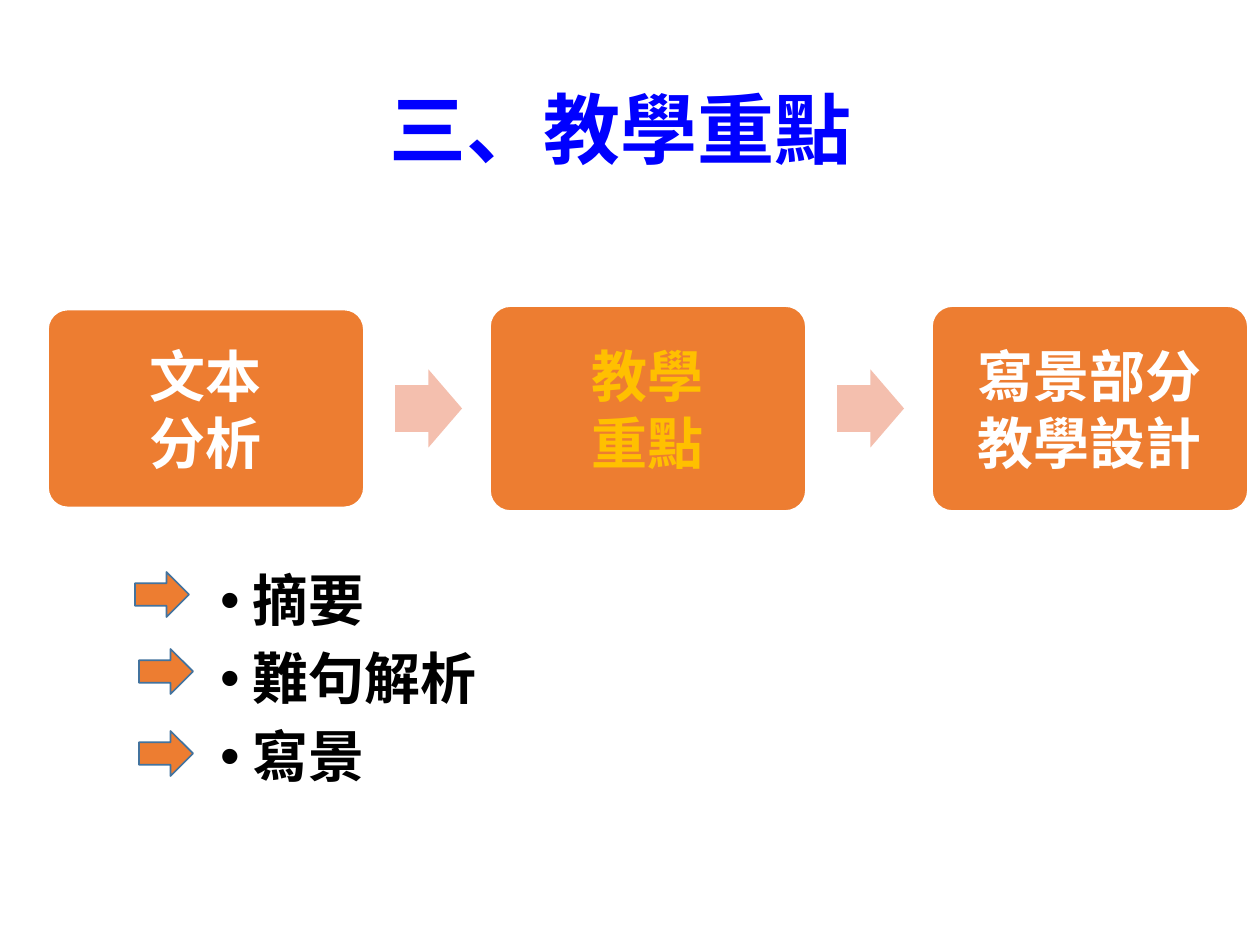
import pptx
import pptx.util
import pptx.dml.color
import pptx.enum.shapes
import pptx.enum.text
import lxml.etree

SCALE = 914400 / 126
FONT = "Noto Sans CJK SC"
SHAPE = pptx.enum.shapes.MSO_SHAPE
ALIGN = pptx.enum.text.PP_ALIGN
ANCHOR = pptx.enum.text.MSO_ANCHOR
NS = "http://schemas.openxmlformats.org/drawingml/2006/main"


def px(n):
    return pptx.util.Emu(round(n * SCALE))


def color(value):
    return pptx.dml.color.RGBColor.from_string(value)


def add_tag(parent, tag, **attrs):
    return lxml.etree.SubElement(parent, f"{{{NS}}}{tag}", **attrs)


def write(sp, lines, size=32, fill="FFFFFF", align=ALIGN.LEFT, anchor=ANCHOR.TOP,
          spacing=None, before=0, bullet=None, inset=(13, 6)):
    tf = sp.text_frame
    tf.word_wrap = True
    tf.auto_size = pptx.enum.text.MSO_AUTO_SIZE.NONE
    tf.vertical_anchor = anchor
    tf.margin_left = tf.margin_right = px(inset[0])
    tf.margin_top = tf.margin_bottom = px(inset[1])
    for i, line in enumerate(lines):
        p = tf.paragraphs[0] if i == 0 else tf.add_paragraph()
        p.alignment = align
        p.line_spacing = spacing
        p.space_before = pptx.util.Pt(before if i else 0)
        if bullet:
            pPr = p._p.get_or_add_pPr()
            pPr.set("marL", str(px(32)))
            pPr.set("indent", str(-px(32)))
            add_tag(pPr, "buFont", typeface="Arial")
            add_tag(pPr, "buChar", char=bullet)
        r = p.add_run()
        r.text = line
        r.font.size = pptx.util.Pt(size)
        r.font.bold = True
        r.font.color.rgb = color(fill)
        r.font.name = FONT
        add_tag(r._r.get_or_add_rPr(), "ea", typeface=FONT)


def place(sp, x, y, w, h):
    sp.left, sp.top, sp.width, sp.height = px(x), px(y), px(w), px(h)


def add_shape(s, kind, x, y, w, h, fill, line=None, adjust=()):
    sp = s.shapes.add_shape(kind, px(x), px(y), px(w), px(h))
    sp.shadow.inherit = False
    sp.fill.solid()
    sp.fill.fore_color.rgb = color(fill)
    if line:
        sp.line.color.rgb = color(line)
        sp.line.width = pptx.util.Pt(1)
    else:
        sp.line.fill.background()
    for i, value in enumerate(adjust):
        sp.adjustments[i] = value
    return sp


def add_title(s, x, y, w, h):
    sp = s.shapes.title
    place(sp, x, y, w, h)
    write(sp, ["三、教學重點"], size=44, fill="0000FF", align=ALIGN.CENTER, spacing=0.9)


def add_process(s, x, y, w, h):
    steps = [
        (["文本", "分析"], "FFFFFF", 198),
        (["教學", "重點"], "FFC000", h),
        (["寫景部分教學設計"], "FFFFFF", h),
    ]
    box_w, arrow_w, arrow_h = 316, 67, 78
    pitch = (w - box_w) / (len(steps) - 1)
    for i, (lines, fill, box_h) in enumerate(steps):
        left = x + i * pitch
        sp = add_shape(s, SHAPE.ROUNDED_RECTANGLE, left, y + (h - box_h) / 2,
                       box_w, box_h, "ED7D31", "FFFFFF", [0.1])
        write(sp, lines, fill=fill, align=ALIGN.CENTER, anchor=ANCHOR.MIDDLE, inset=(16, 16))
        if i < len(steps) - 1:
            add_shape(s, SHAPE.RIGHT_ARROW, left + 347, y + (h - arrow_h) / 2,
                      arrow_w, arrow_h, "F4BFAE", adjust=[0.6, 0.5])


def add_points(s, x, y, w, h):
    sp = s.placeholders[1]
    place(sp, x, y, w, h)
    write(sp, ["摘要", "難句解析", "寫景"], fill="000000", spacing=0.9, before=10, bullet="•")
    for dx, dy in [(-72, 5), (-68, 82), (-68, 164)]:
        add_shape(s, SHAPE.RIGHT_ARROW, x + dx, y + dy, 54, 45, "ED7D31", "43739E")


def main():
    prs = pptx.Presentation()
    prs.slide_width, prs.slide_height = px(1260), px(945)
    s = prs.slides.add_slide(prs.slide_layouts[1])
    add_title(s, 129, 86, 983, 118)
    add_process(s, 48, 306, 1200, 205)
    add_points(s, 207, 567, 924, 255)
    prs.save("out.pptx")


if __name__ == "__main__":
    main()
